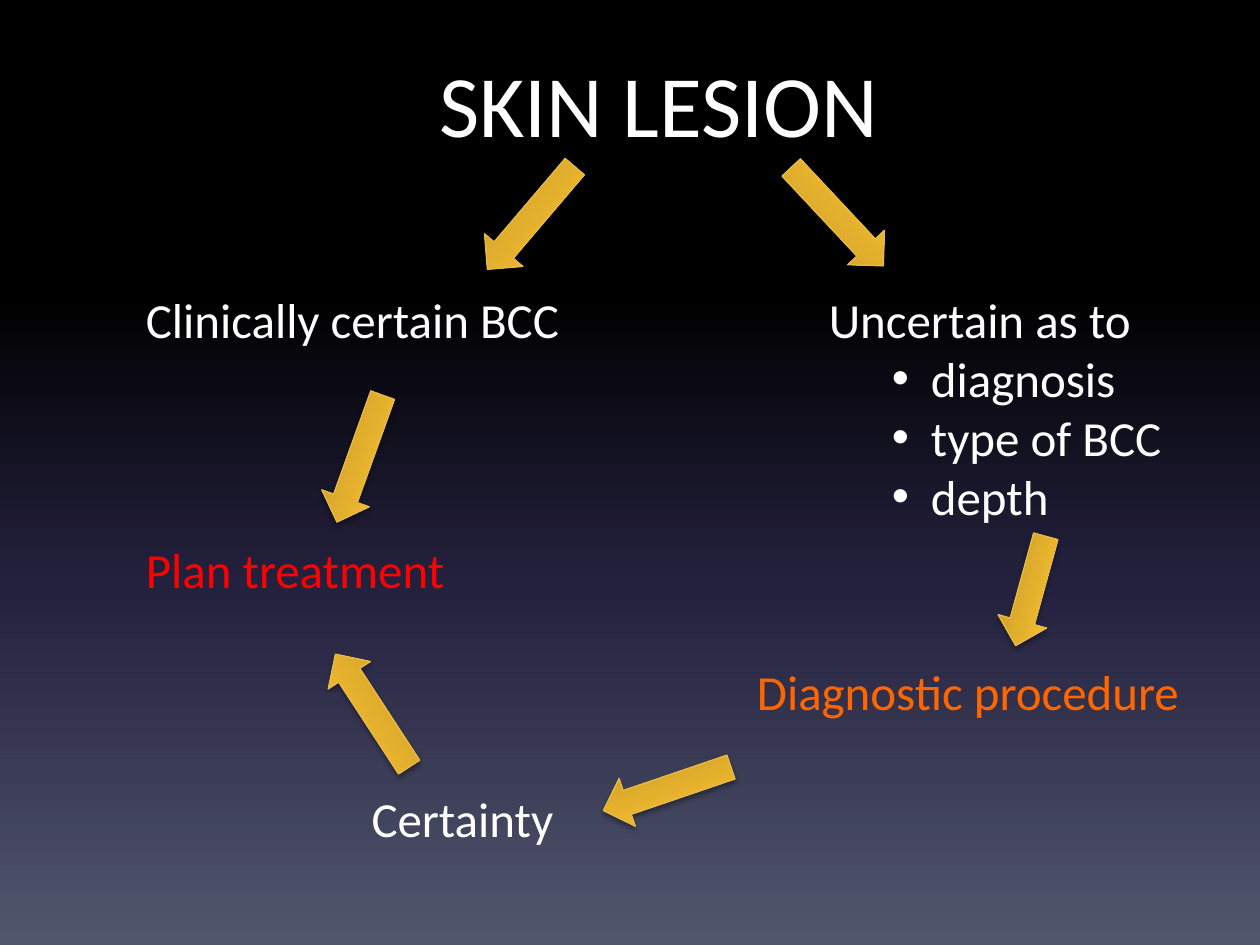
"""Build the skin lesion decision flow slide."""
from lxml import etree
from pptx import Presentation
from pptx.dml.color import RGBColor
from pptx.enum.shapes import MSO_SHAPE
from pptx.enum.text import MSO_ANCHOR, PP_ALIGN
from pptx.oxml.ns import qn
from pptx.util import Inches, Pt

RIGHT_ARROW = MSO_SHAPE.RIGHT_ARROW
TOP = MSO_ANCHOR.TOP
CENTER, LEFT = PP_ALIGN.CENTER, PP_ALIGN.LEFT
WHITE, RED, ORANGE = "FFFFFF", "FF0000", "FF6600"
NIGHT = [(0, "000000"), (31, "000000"), (62, "24213E"), (100, "51566D")]
GOLD = [(0, "BF9426"), (80, "F8C031"), (100, "FDC32D")]

deck = Presentation()
deck.slide_width, deck.slide_height = Inches(10), Inches(7.5)
page = deck.slides.add_slide(deck.slide_layouts[6])


def place(left, top, width, height):
    across, down = deck.slide_width / 100, deck.slide_height / 100
    return [round(n) for n in (left * across, top * down, width * across, height * down)]


def set_gradient(fill, holder, stops, angle):
    fill.solid()
    fill.fore_color.rgb = RGBColor.from_string(stops[0][1])
    solid = holder.find(qn("a:solidFill"))
    gradient = etree.Element(qn("a:gradFill"), rotWithShape="1")
    stop_list = etree.SubElement(gradient, qn("a:gsLst"))
    for share, color in stops:
        stop = etree.SubElement(stop_list, qn("a:gs"), pos=str(share * 1000))
        etree.SubElement(stop, qn("a:srgbClr"), val=color)
    etree.SubElement(gradient, qn("a:lin"), ang=str(angle * 60000), scaled="0")
    holder.replace(solid, gradient)


background = page.background.fill
background.solid()
set_gradient(background, page.element.find(".//" + qn("p:bgPr")), NIGHT, 90)

labels = [
    (["SKIN LESION"], (7.3, 4.67, 90, 16.67), 50, WHITE),
    (["Clinically certain BCC"], (10.6, 30, 36.2, 7.6), 28, WHITE),
    (["Uncertain as to", "diagnosis", "type of BCC", "depth"], (64.8, 30, 29.1, 26.53), 28, WHITE),
    (["Diagnostic procedure"], (59.1, 69.33, 36.7, 7.6), 28, ORANGE),
    (["Certainty"], (28.5, 82.8, 17.1, 7.6), 28, WHITE),
    (["Plan treatment"], (10.6, 56.4, 26.5, 7.6), 28, RED),
]
for lines, area, size, color in labels:
    is_title = size == 50
    box = page.shapes.add_textbox(*place(*area))
    frame = box.text_frame
    frame.word_wrap = is_title
    frame.vertical_anchor = TOP
    for index, line in enumerate(lines):
        para = frame.paragraphs[0] if index == 0 else frame.add_paragraph()
        para.text = line
        para.alignment = CENTER if is_title else LEFT
        if index:
            para.level = 1
            props = para._p.get_or_add_pPr()
            props.set("marL", str(Inches(0.81)))
            props.set("indent", str(Inches(-0.31)))
            etree.SubElement(props, qn("a:buFont"), typeface="Arial")
            etree.SubElement(props, qn("a:buChar"), char="•")
        para.font.name = "Calibri"
        para.font.size = Pt(size)
        para.font.color.rgb = RGBColor.from_string(color)

arrows = [
    (36.8, 20.4, 10.7, 130.4),
    (77.3, 59.87, 9, 105.4),
    (61.1, 20.27, 10.7, 46.9),
    (47.6, 80.8, 10.7, 161.2),
    (24.2, 72.53, 10.7, 236.9),
    (23.2, 45.87, 10.7, 109.8),
]
for left, top, length, turn in arrows:
    arrow = page.shapes.add_shape(RIGHT_ARROW, *place(left, top, length, 5.33))
    arrow.rotation = turn
    arrow_props = arrow._element.spPr
    set_gradient(arrow.fill, arrow_props, GOLD, 270)
    arrow.line.color.rgb = RGBColor.from_string("E7BA45")
    arrow.line.width = Pt(0.75)
    arrow.shadow.inherit = False
    shadow = etree.SubElement(
        arrow_props.find(qn("a:effectLst")), qn("a:outerShdw"),
        blurRad=str(Pt(3.1)), dist=str(Pt(1.8)), dir="5400000", rotWithShape="0")
    shade = etree.SubElement(shadow, qn("a:srgbClr"), val="000000")
    etree.SubElement(shade, qn("a:alpha"), val="35000")

deck.save("out.pptx")
